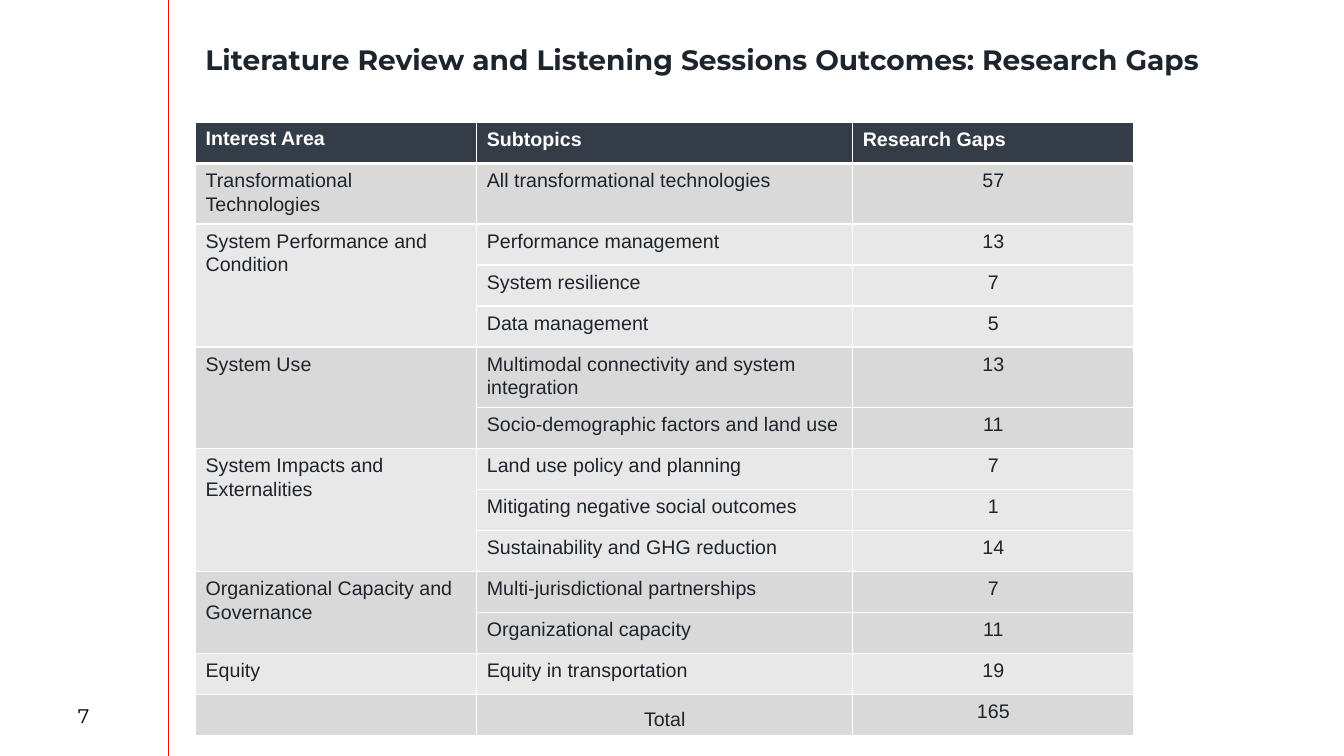
"""Build the research gaps slide with its table of interest areas."""
import lxml.etree
import pptx
import pptx.dml.color
import pptx.enum.shapes
import pptx.enum.text
import pptx.oxml.ns
import pptx.util

Pt = pptx.util.Pt
ALIGN = pptx.enum.text.PP_ALIGN
ANCHOR = pptx.enum.text.MSO_ANCHOR

TITLE = "Literature Review and Listening Sessions Outcomes: Research Gaps"
PAGE_NUMBER = "7"
HEADERS = ["Interest Area", "Subtopics", "Research Gaps"]
AREAS = [
    ("Transformational Technologies", [("All transformational technologies", 57)]),
    ("System Performance and Condition", [
        ("Performance management", 13),
        ("System resilience", 7),
        ("Data management", 5),
    ]),
    ("System Use", [
        ("Multimodal connectivity and system integration", 13),
        ("Socio-demographic factors and land use", 11),
    ]),
    ("System Impacts and Externalities", [
        ("Land use policy and planning", 7),
        ("Mitigating negative social outcomes", 1),
        ("Sustainability and GHG reduction", 14),
    ]),
    ("Organizational Capacity and Governance", [
        ("Multi-jurisdictional partnerships", 7),
        ("Organizational capacity", 11),
    ]),
    ("Equity", [("Equity in transportation", 19)]),
    ("", [("Total", 165)]),
]
WIDTH, HEIGHT = 960, 540
RULE_X = 120.3
TABLE_LEFT, TABLE_TOP = 139.7, 87.5
COL_WIDTHS = [200.9, 268.5, 200.9]
ROW_HEIGHT = 29.3
INK, WHITE, HEADER_FILL = "1E242B", "FFFFFF", "333C47"
BANDS = ["D9D9D9", "E8E8E9"]


def rgb(value):
    return pptx.dml.color.RGBColor.from_string(value)


def write(tf, text, size, font, color, bold=False, align=None):
    p = tf.paragraphs[0]
    p.text = text
    p.alignment = align
    for r in p.runs:
        r.font.size = Pt(size)
        r.font.name = font
        r.font.bold = bold
        r.font.color.rgb = rgb(color)
    return p


def add_text(s, box, text, size, color, **style):
    tf = s.shapes.add_textbox(*map(Pt, box)).text_frame
    tf.word_wrap = True
    write(tf, text, size, "Montserrat", color, **style)
    return tf


def set_borders(cell, top, bottom):
    qn = pptx.oxml.ns.qn
    tc_pr = cell._tc.get_or_add_tcPr()
    for side, width in [("L", 1), ("R", 1), ("T", top), ("B", bottom)]:
        ln = lxml.etree.SubElement(tc_pr, qn("a:ln" + side), w=str(Pt(width)))
        fill = lxml.etree.SubElement(ln, qn("a:solidFill"))
        lxml.etree.SubElement(fill, qn("a:srgbClr"), val=WHITE)


def fill_cell(cell, row, col, text, fill):
    header = row == 0
    set_borders(cell, 3 if row == 1 else 1, 3 if header else 1)
    cell.fill.solid()
    cell.fill.fore_color.rgb = rgb(fill)
    if text == "":
        return
    centred = text == "Total" or (col == 2 and not header)
    p = write(cell.text_frame, text, 14, "Arial", WHITE if header else INK,
              bold=header, align=ALIGN.CENTER if centred else None)
    if not (header and col == 0):
        p.line_spacing = 1.07
        p.space_before = p.space_after = Pt(3)
    if text == "Total":
        cell.vertical_anchor = ANCHOR.BOTTOM


def add_gaps_table(s):
    rows = [(HEADERS, HEADER_FILL)]
    spans = []
    for i, (area, subtopics) in enumerate(AREAS):
        spans.append((len(rows), len(rows) + len(subtopics) - 1))
        for j, (subtopic, gaps) in enumerate(subtopics):
            rows.append(([area if j == 0 else "", subtopic, str(gaps)], BANDS[i % 2]))

    table = s.shapes.add_table(len(rows), len(COL_WIDTHS), Pt(TABLE_LEFT), Pt(TABLE_TOP),
                               Pt(sum(COL_WIDTHS)), Pt(ROW_HEIGHT * len(rows))).table
    for column, width in zip(table.columns, COL_WIDTHS):
        column.width = Pt(width)
    for row, (texts, fill) in enumerate(rows):
        table.rows[row].height = Pt(ROW_HEIGHT)
        for col, text in enumerate(texts):
            fill_cell(table.cell(row, col), row, col, text, fill)
    for first, last in spans:
        if last > first:
            table.cell(first, 0).merge(table.cell(last, 0))


def main():
    prs = pptx.Presentation()
    prs.slide_width, prs.slide_height = Pt(WIDTH), Pt(HEIGHT)
    s = prs.slides.add_slide(prs.slide_layouts[6])

    number = add_text(s, (0, 496.8, 119.5, 28.8), PAGE_NUMBER, 14, "000000", align=ALIGN.CENTER)
    number.vertical_anchor = ANCHOR.MIDDLE

    rule = s.shapes.add_connector(pptx.enum.shapes.MSO_CONNECTOR.STRAIGHT,
                                  Pt(RULE_X), Pt(0), Pt(RULE_X), Pt(HEIGHT))
    rule.line.color.rgb = rgb("FF0000")
    rule.line.width = Pt(0.75)
    lxml.etree.SubElement(rule._element.spPr, pptx.oxml.ns.qn("a:effectLst"))

    add_gaps_table(s)
    add_text(s, (TABLE_LEFT, 26.6, 735, 50.4), TITLE, 20, INK, bold=True)
    prs.save("out.pptx")


if __name__ == "__main__":
    main()
